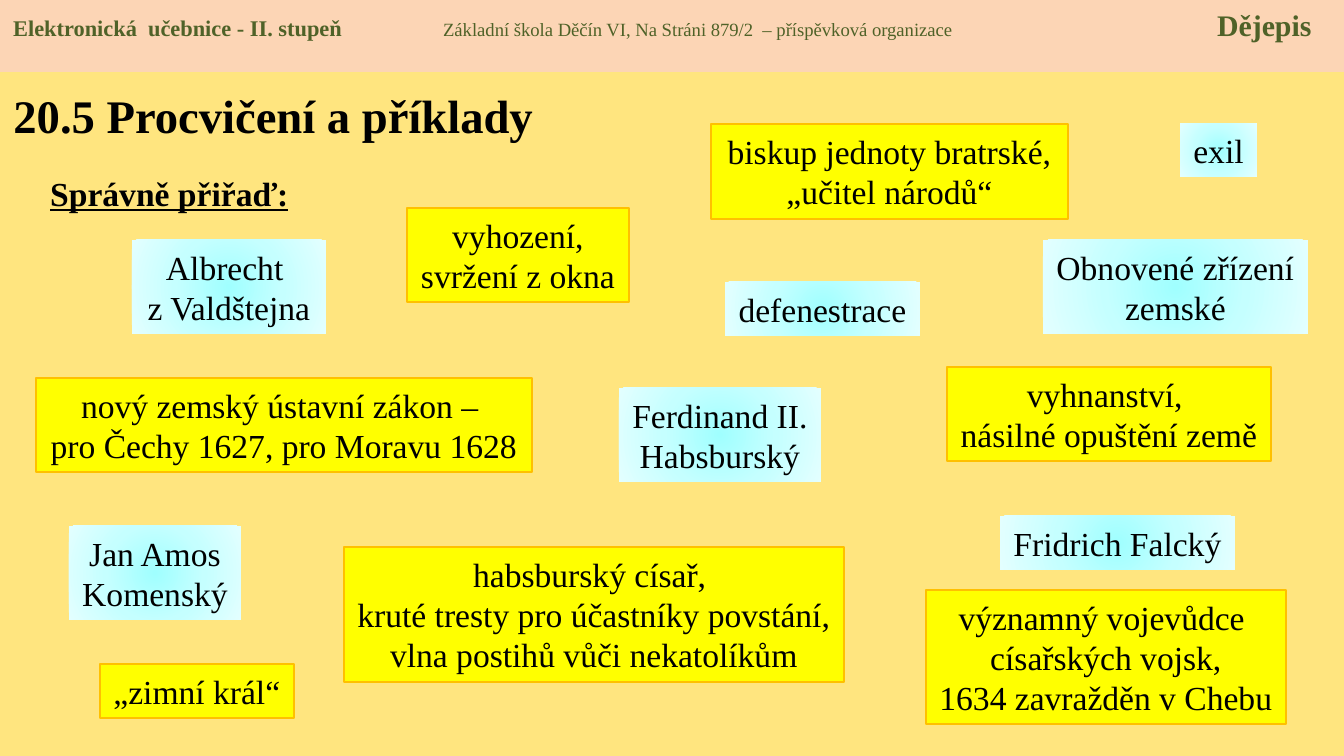
from lxml import etree
from pptx import Presentation
from pptx import util as u
from pptx.dml.color import RGBColor
from pptx.enum import shapes, text
from pptx.oxml import parse_xml
from pptx.oxml.ns import nsdecls, qn

WIDTH, HEIGHT = 1344, 756
SCALE = u.Inches(10) / WIDTH
FONT = "Times New Roman"
GLOW = [(0, "A0FFFF"), (50, "C5FFFF"), (100, "E3FFFF")]

TERMS = [
    (1180, 123, 77, 54, "exil"),
    (725, 282, 195, 54, "defenestrace"),
    (1043, 240, 265, 94, "Obnovené zřízení\nzemské"),
    (1000, 516, 235, 54, "Fridrich Falcký"),
    (69, 526, 172, 94, "Jan Amos\nKomenský"),
    (132, 240, 194, 94, "Albrecht \nz Valdštejna"),
    (619, 388, 202, 94, "Ferdinand II.\nHabsburský"),
]
CLUES = [
    (36, 378, 496, 94, "nový zemský ústavní zákon – \npro Čechy 1627, pro Moravu 1628"),
    (947, 367, 324, 94, "vyhnanství, \nnásilné opuštění země"),
    (407, 208, 222, 94, "vyhození,\nsvržení z okna"),
    (711, 124, 357, 95, "biskup jednoty bratrské,\n„učitel národů“"),
    (926, 590, 360, 134, "významný vojevůdce \ncísařských vojsk,\n1634 zavražděn v Chebu"),
    (100, 664, 194, 54, "„zimní král“"),
    (344, 547, 500, 135,
     "habsburský císař, \nkruté tresty pro účastníky povstání,\nvlna postihů vůči nekatolíkům"),
]


def px(n):
    return u.Emu(round(n * SCALE))


def color(code):
    return RGBColor.from_string(code)


def paint(fill, code):
    fill.solid()
    fill.fore_color.rgb = color(code)


def style(font, size, code="000000", bold=False):
    font.name, font.size, font.bold = FONT, u.Pt(size), bold
    font.color.rgb = color(code)


def write(frame, words, size, align, bold=False):
    frame.text = words
    for para in frame.paragraphs:
        para.alignment = align
        style(para.font, size, bold=bold)


def fit(frame):
    frame.word_wrap = False
    frame.auto_size = text.MSO_AUTO_SIZE.SHAPE_TO_FIT_TEXT


def add_rect(slide, *place):
    rect = slide.shapes.add_shape(shapes.MSO_SHAPE.RECTANGLE, *map(px, place))
    rect.shadow.inherit = False
    rect.line.fill.background()
    rect.text_frame.vertical_anchor = text.MSO_ANCHOR.TOP
    return rect


def add_card(slide, x, y, w, h, words):
    card = add_rect(slide, x, y, w, h)
    write(card.text_frame, words, 18, text.PP_ALIGN.CENTER)
    fit(card.text_frame)
    return card


def add_term(slide, *spot):
    card = add_card(slide, *spot)
    card.fill.background()
    stops = "".join(
        f'<a:gs pos="{pos * 1000}"><a:srgbClr val="{code}"/></a:gs>' for pos, code in GLOW)
    glow = parse_xml(
        f'<a:gradFill {nsdecls("a")} rotWithShape="1"><a:gsLst>{stops}</a:gsLst>'
        '<a:path path="circle"><a:fillToRect l="50000" t="50000" r="50000" b="50000"/>'
        '</a:path></a:gradFill>')
    props = card._element.spPr
    props.replace(props.find(qn("a:noFill")), glow)


def add_clue(slide, *spot):
    card = add_card(slide, *spot)
    paint(card.fill, "FFFF00")
    paint(card.line.fill, "FFC000")
    card.line.width = u.Pt(0.75)


def add_header(slide):
    band = add_rect(slide, 0, 0, WIDTH, 72)
    paint(band.fill, "FCD5B5")
    para = band.text_frame.paragraphs[0]
    para.alignment = text.PP_ALIGN.LEFT
    tabs = etree.SubElement(para._p.get_or_add_pPr(), qn("a:tabLst"))
    for stop in (430, 1204):
        etree.SubElement(tabs, qn("a:tab"), pos=str(px(stop)), algn="l")
    for words, size, bold in (
        ("Elektronická  učebnice - II. stupeň\t", 12, True),
        ("Základní škola Děčín VI, Na Stráni 879/2  – příspěvková organizace\t", 10, False),
        ("Dějepis", 16, True),
    ):
        run = para.add_run()
        run.text = words
        style(run.font, size, "4F6228", bold)


def add_title(slide):
    title = slide.shapes.title
    title.left, title.top, title.width, title.height = map(px, (0, 71, 667, 87))
    frame = title.text_frame
    frame.vertical_anchor = text.MSO_ANCHOR.MIDDLE
    frame.auto_size = text.MSO_AUTO_SIZE.NONE
    write(frame, "20.5 Procvičení a příklady", 25, text.PP_ALIGN.LEFT, True)


def add_task(slide):
    frame = slide.shapes.add_textbox(*map(px, (37, 166, 266, 54))).text_frame
    write(frame, "Správně přiřaď:", 18, text.PP_ALIGN.LEFT, True)
    frame.paragraphs[0].font.underline = True
    fit(frame)


def main():
    deck = Presentation()
    deck.slide_width, deck.slide_height = px(WIDTH), px(HEIGHT)
    slide = deck.slides.add_slide(deck.slide_layouts[5])
    paint(slide.background.fill, "FFE57F")
    add_title(slide)
    add_header(slide)
    add_task(slide)
    for spot in TERMS:
        add_term(slide, *spot)
    for spot in CLUES:
        add_clue(slide, *spot)
    deck.save("out.pptx")


if __name__ == "__main__":
    main()
